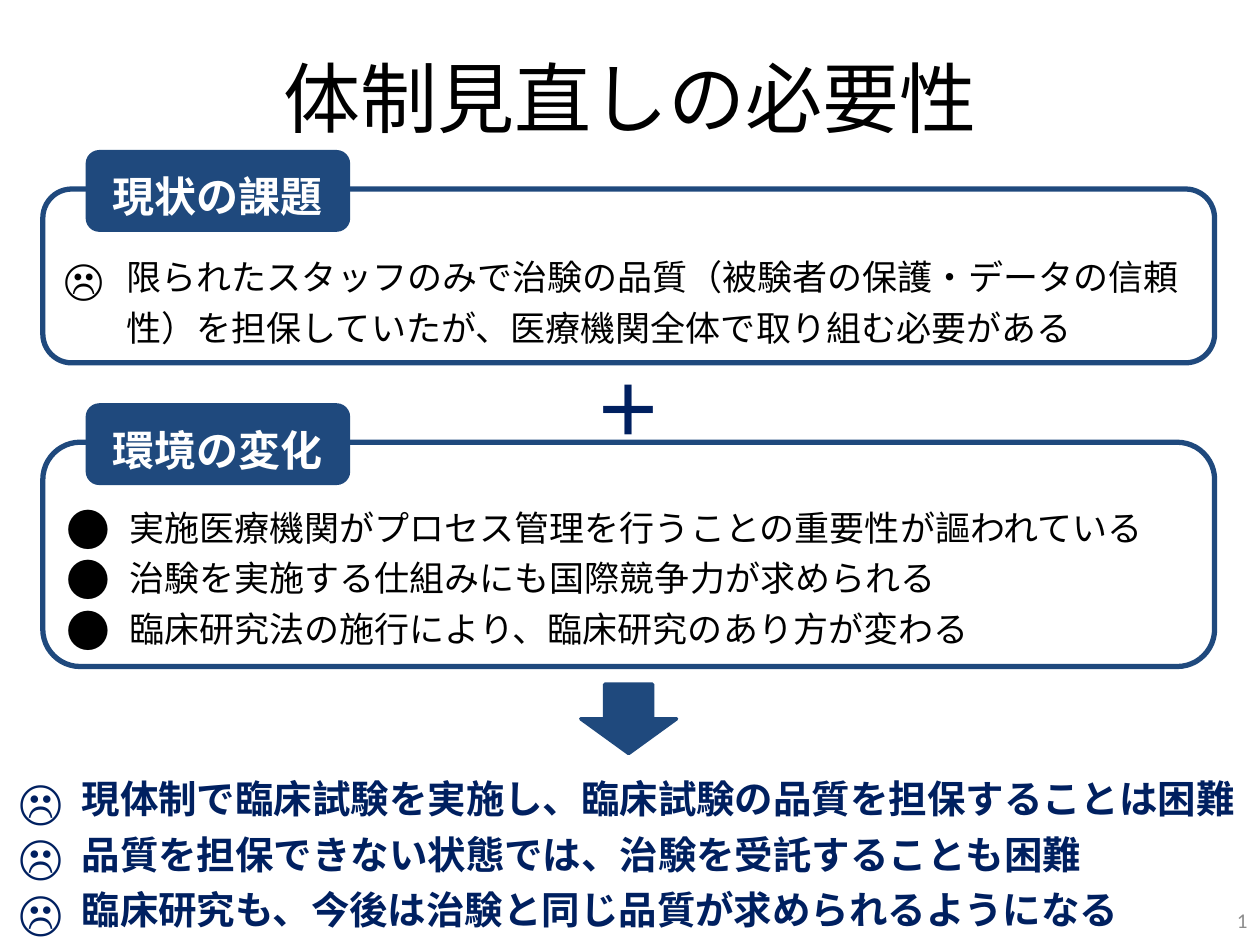
from lxml.etree import SubElement
from pptx import Presentation
from pptx.dml.color import RGBColor
from pptx.enum.shapes import MSO_SHAPE as Shape
from pptx.enum.text import MSO_ANCHOR as Anchor, PP_ALIGN as Align
from pptx.oxml.ns import qn
from pptx.util import Inches, Pt

COLORS = {"blue": "1F497D", "navy": "002060", "black": "000000",
          "white": "FFFFFF", "gray": "8C8C8C"}
JAPANESE = "Noto Sans CJK JP"
COLUMNS, ROWS = 100, 75

SECTIONS = [
    # top row, height in rows, heading, bullet, items
    (15, 13.8, "現状の課題", "☹", [
        "限られたスタッフのみで治験の品質（被験者の保護・データの信頼性）を担保していたが、"
        "医療機関全体で取り組む必要がある"]),
    (35.1, 17.8, "環境の変化", "●", [
        "実施医療機関がプロセス管理を行うことの重要性が謳われている",
        "治験を実施する仕組みにも国際競争力が求められる",
        "臨床研究法の施行により、臨床研究のあり方が変わる"]),
]
CONCLUSIONS = [
    "現体制で臨床試験を実施し、臨床試験の品質を担保することは困難",
    "品質を担保できない状態では、治験を受託することも困難",
    "臨床研究も、今後は治験と同じ品質が求められるようになる",
]


class SlideBuilder:
    def __init__(self):
        self.deck = Presentation()
        self.deck.slide_width, self.deck.slide_height = Inches(10), Inches(7.5)
        self.page = self.deck.slides.add_slide(self.deck.slide_layouts[6])

    def place(self, left, top, width, height):
        """Turn grid columns and rows into lengths."""
        column = self.deck.slide_width / COLUMNS
        row = self.deck.slide_height / ROWS
        return [round(n) for n in (left * column, top * row, width * column, height * row)]

    def color(self, name):
        return RGBColor.from_string(COLORS[name])

    def shape(self, kind, area, fill=None, line=None, weight=0):
        box = self.page.shapes.add_shape(kind, *self.place(*area))
        box.shadow.inherit = False
        if fill:
            box.fill.solid()
            box.fill.fore_color.rgb = self.color(fill)
        else:
            box.fill.background()
        if line:
            box.line.color.rgb = self.color(line)
            box.line.width = Pt(weight)
        else:
            box.line.fill.background()
        return box

    def text_box(self, area, wrap=True):
        box = self.page.shapes.add_textbox(*self.place(*area))
        box.text_frame.word_wrap = wrap
        return box

    def add_text(self, box, lines, size, color, bold=False, font=JAPANESE,
                 anchor=Anchor.MIDDLE, align=Align.LEFT, spacing=None, bullet=None):
        frame = box.text_frame
        frame.vertical_anchor = anchor
        for index, line in enumerate(lines):
            para = frame.add_paragraph() if index else frame.paragraphs[0]
            para.alignment, para.line_spacing = align, spacing
            if bullet:
                self.add_bullet(para, bullet)
            span = para.add_run()
            span.text = line
            for name, value in {"size": Pt(size), "bold": bold, "name": font}.items():
                setattr(span.font, name, value)
            span.font.color.rgb = self.color(color)
            SubElement(span.font._element, qn("a:ea"), typeface=font)

    def add_bullet(self, para, sign):
        props = para._p.get_or_add_pPr()
        props.set("marL", str(Inches(0.5)))
        props.set("indent", str(-Inches(0.5)))
        SubElement(props, qn("a:buSzPct"), val="125000")
        SubElement(props, qn("a:buFont"), typeface=JAPANESE)
        SubElement(props, qn("a:buChar"), char=sign)

    def bullets(self, box, lines, bullet, size, color, bold=False):
        self.add_text(box, lines, size, color, bold, anchor=Anchor.BOTTOM,
                      spacing=1.2, bullet=bullet)

    def section(self, top, height, heading, bullet, items):
        """Outlined panel with a heading tab over its top edge."""
        panel = self.shape(Shape.ROUNDED_RECTANGLE, (3.4, top, 93, height),
                           line="blue", weight=3)
        self.bullets(panel, items, bullet, 20, "black")
        tab = self.shape(Shape.ROUNDED_RECTANGLE, (6.8, top - 3.1, 21, 6.5), fill="blue")
        self.add_text(tab, [heading], 24, "white", bold=True, align=Align.CENTER,
                      spacing=1.2)


def main():
    slide = SlideBuilder()
    slide.add_text(slide.text_box((5, 3, 90, 9.3)), ["体制見直しの必要性"], 44, "black",
                   align=Align.CENTER)
    for section in SECTIONS:
        slide.section(*section)

    summary = slide.shape(Shape.ROUNDED_RECTANGLE, (0.5, 58.5, 98.8, 16))
    summary.adjustments[0] = 0
    slide.bullets(summary, CONCLUSIONS, "☹", 22, "navy", bold=True)

    slide.add_text(slide.text_box((46.1, 28.6, 7.6, 7.7), wrap=False), ["＋"], 40, "navy",
                   bold=True, anchor=Anchor.TOP)
    slide.shape(Shape.DOWN_ARROW, (46.1, 54.3, 7.6, 5.5), "blue", "blue", 2)
    slide.add_text(slide.text_box((76.7, 71, 23.3, 4)), ["1"], 12, "gray", font="Calibri",
                   align=Align.RIGHT)
    slide.deck.save("out.pptx")


if __name__ == "__main__":
    main()
